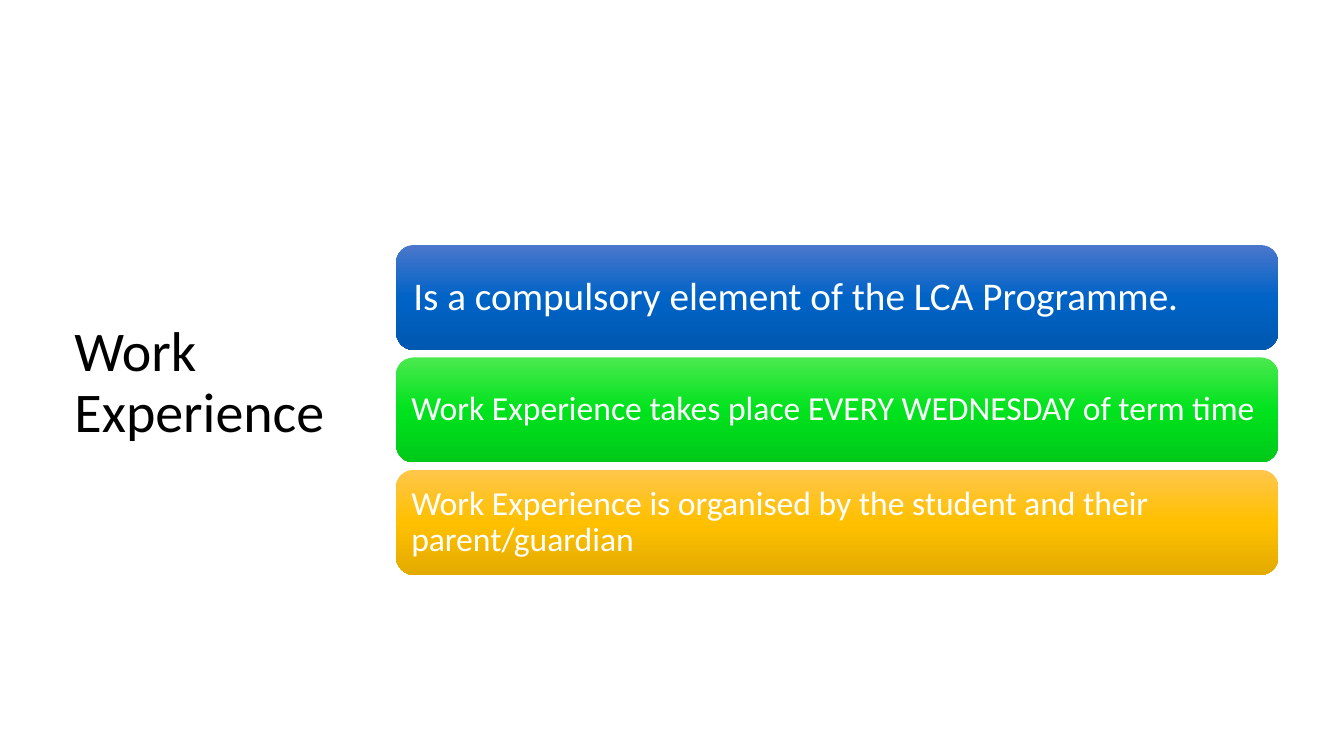
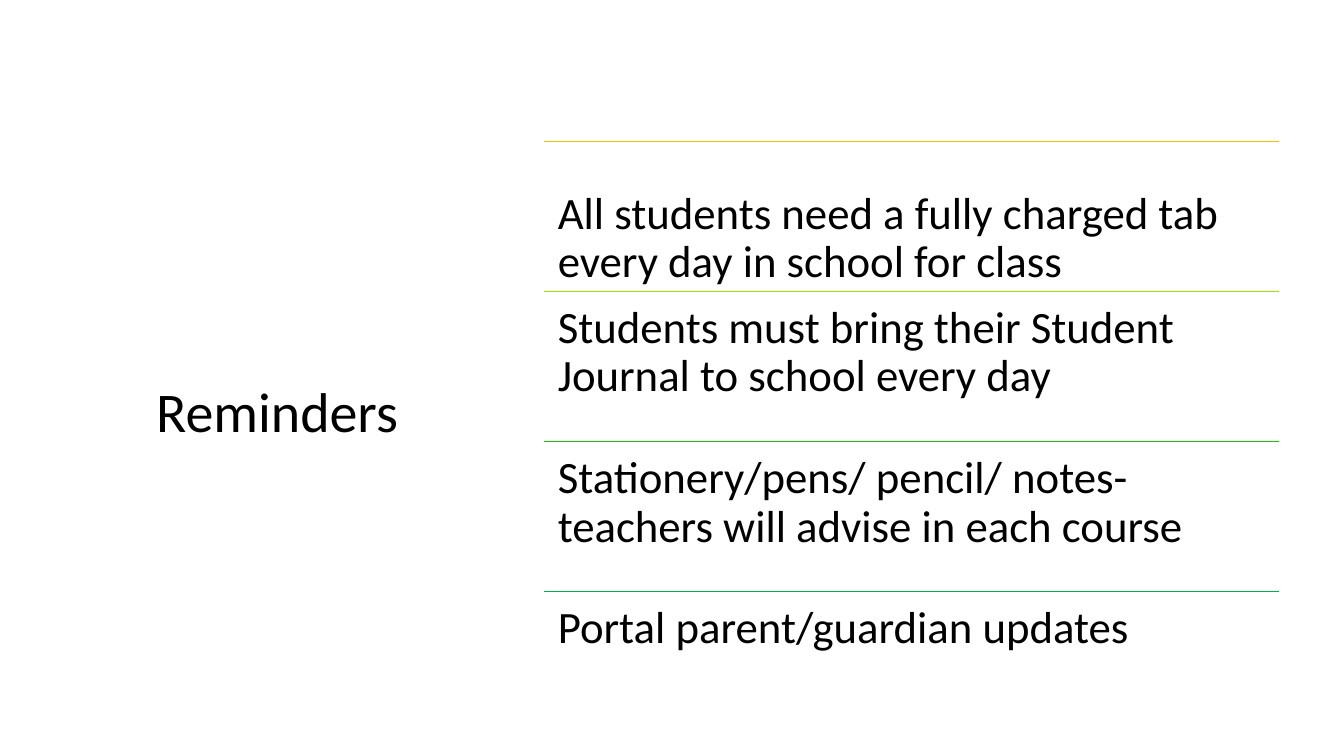
"""Build two school information slides: work experience and reminders."""
from copy import deepcopy

from pptx import Presentation
from pptx.dml.color import RGBColor
from pptx.enum.shapes import MSO_CONNECTOR, MSO_SHAPE
from pptx.enum.text import MSO_ANCHOR, MSO_AUTO_SIZE, PP_ALIGN
from pptx.oxml.ns import qn
from pptx.util import Pt

ROUNDED = MSO_SHAPE.ROUNDED_RECTANGLE
STRAIGHT = MSO_CONNECTOR.STRAIGHT
TOP, MIDDLE, BOTTOM = MSO_ANCHOR.TOP, MSO_ANCHOR.MIDDLE, MSO_ANCHOR.BOTTOM
LEFT, RIGHT = PP_ALIGN.LEFT, PP_ALIGN.RIGHT
NO_FIT = MSO_AUTO_SIZE.NONE
TITLE_ONLY = 5
FONT = "Calibri"
COLORS = {
    "text": "000000",
    "bar_text": "FFFFFF",
    "blue": ("4B77CC", "0063C6", "0058B0"),
    "green": ("4BE94E", "00E21D", "00C919"),
    "gold": ("FFC64B", "FFC000", "E3AB00"),
    "rules": ("FFC000", "9BE500", "17CA00", "00B050"),
}
BARS = [
    ("Is a compulsory element of the LCA Programme.", "blue", 28, 8.6),
    ("Work Experience takes place EVERY WEDNESDAY of term time", "green", 24, 7.2),
    ("Work Experience is organised by the student and their parent/guardian",
     "gold", 24, 7.2),
]
BAR_LEFT, BAR_TOP, BAR_WIDTH, BAR_HEIGHT, BAR_PITCH = 283, 175, 630, 75, 80.3
REMINDERS = [
    "All students need a fully charged tab every day in school for class",
    "Students must bring their Student Journal to school every day",
    "Stationery/pens/ pencil/ notes- teachers will advise in each course",
    "Portal parent/guardian updates",
]
ROW_LEFT, ROW_TOP, ROW_WIDTH, ROW_PITCH = 388.8, 100.8, 525, 107.3
FIRST_ROW_SHIFT = 25.9


def write(sp, text, size, color, anchor, align=LEFT, inset=None):
    """Fill a shape with one formatted paragraph."""
    tf = sp.text_frame
    tf.text = text
    tf.word_wrap = True
    tf.auto_size = NO_FIT
    tf.vertical_anchor = anchor
    if inset is not None:
        tf.margin_left = tf.margin_right = Pt(inset)
        tf.margin_top = tf.margin_bottom = Pt(inset)
    p = tf.paragraphs[0]
    p.alignment = align
    p.line_spacing = 0.9
    p.font.name = FONT
    p.font.size = Pt(size)
    p.font.color.rgb = RGBColor.from_string(COLORS[color])


def add_titled_slide(prs, title, align=LEFT):
    """Add a slide with its title at the left side."""
    s = prs.slides.add_slide(prs.slide_layouts[TITLE_ONLY])
    sp = s.shapes.title
    sp.left, sp.top, sp.width, sp.height = Pt(46), Pt(132.5), Pt(245.5), Pt(188.6)
    write(sp, title, 40, "text", BOTTOM, align)
    return s


def fill_gradient(sp, colors):
    """Fill a shape from top to bottom with evenly spaced colours."""
    sp.fill.gradient()
    sp.fill.gradient_angle = 270
    stop_list = sp.fill._xPr.find(qn("a:gradFill")).find(qn("a:gsLst"))
    while len(stop_list) < len(colors):
        stop_list.append(deepcopy(stop_list[0]))
    for i, (stop, color) in enumerate(zip(sp.fill.gradient_stops, colors)):
        stop.position = i / (len(colors) - 1)
        stop.color.rgb = RGBColor.from_string(color)


def add_bar(s, top, text, color, size, inset):
    """Add a rounded gradient bar with white text."""
    sp = s.shapes.add_shape(ROUNDED, Pt(BAR_LEFT), Pt(top),
                            Pt(BAR_WIDTH), Pt(BAR_HEIGHT))
    sp.shadow.inherit = False
    sp.line.fill.background()
    fill_gradient(sp, COLORS[color])
    write(sp, text, size, "bar_text", MIDDLE, inset=inset)


def add_rule(s, top, color):
    """Add a thin horizontal rule above a row."""
    line = s.shapes.add_connector(STRAIGHT, Pt(ROW_LEFT), Pt(top),
                                  Pt(ROW_LEFT + ROW_WIDTH), Pt(top))
    line.line.color.rgb = RGBColor.from_string(color)
    line.line.width = Pt(0.5)
    sp_pr = line._element.spPr
    sp_pr.append(sp_pr.makeelement(qn("a:effectLst"), {}))


def add_row_text(s, top, text):
    """Add the text of one reminder."""
    sp = s.shapes.add_textbox(Pt(ROW_LEFT), Pt(top), Pt(ROW_WIDTH), Pt(ROW_PITCH))
    write(sp, text, 32, "text", TOP, inset=9.6)


def main():
    """Build and save the presentation."""
    prs = Presentation()
    prs.slide_width, prs.slide_height = Pt(960), Pt(540)

    s = add_titled_slide(prs, "Work Experience")
    for i, bar in enumerate(BARS):
        add_bar(s, BAR_TOP + i * BAR_PITCH, *bar)

    s = add_titled_slide(prs, "Reminders", RIGHT)
    for i, (text, color) in enumerate(zip(REMINDERS, COLORS["rules"])):
        top = ROW_TOP + i * ROW_PITCH
        add_rule(s, top, color)
        add_row_text(s, top + (FIRST_ROW_SHIFT if i == 0 else 0), text)

    prs.save("out.pptx")


if __name__ == "__main__":
    main()
